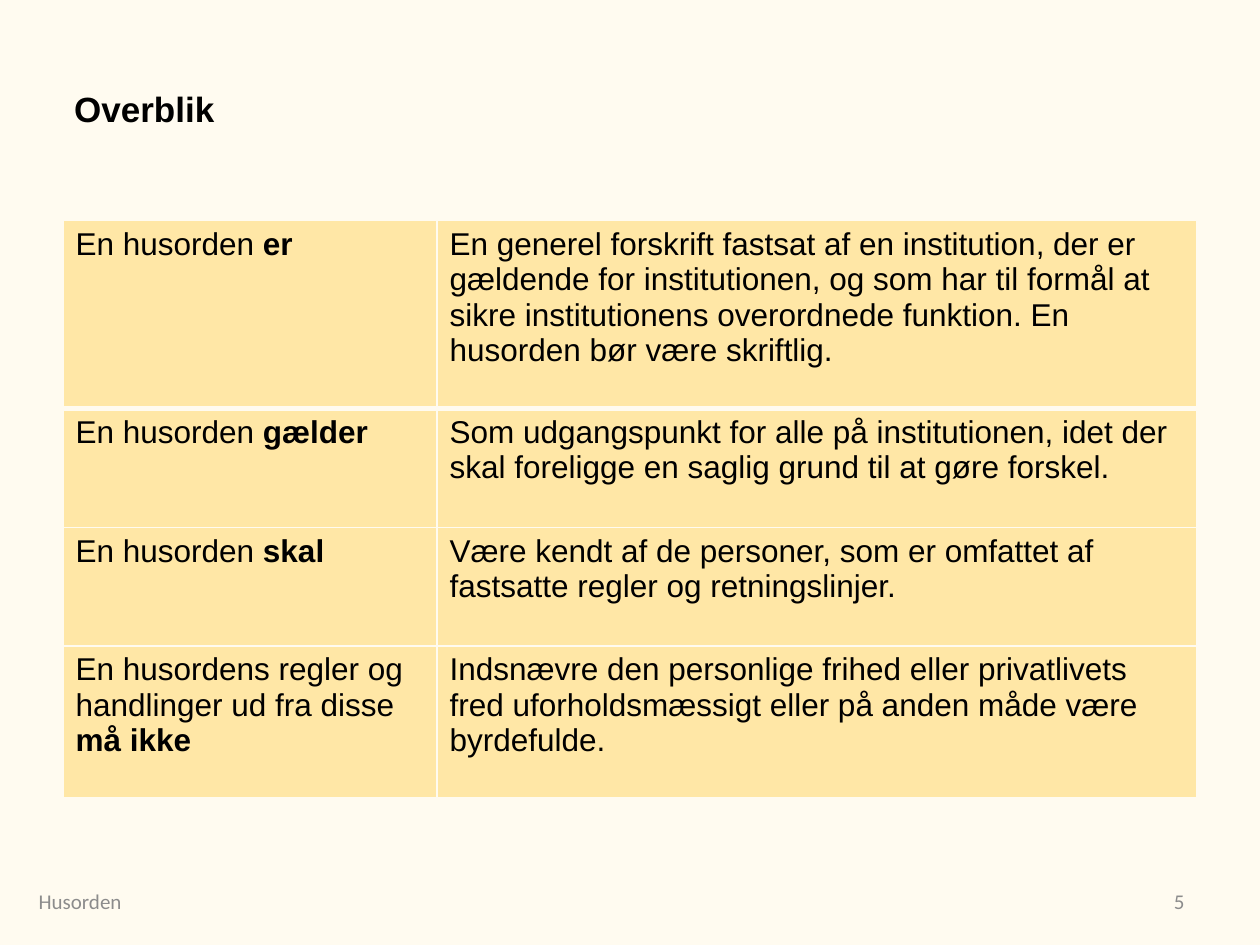
from dataclasses import dataclass

from lxml import etree
from pptx import Presentation
from pptx.dml.color import RGBColor
from pptx.enum.text import MSO_ANCHOR, PP_ALIGN
from pptx.oxml.ns import qn
from pptx.util import Cm, Pt

LEFT, RIGHT = PP_ALIGN.LEFT, PP_ALIGN.RIGHT
MIDDLE = MSO_ANCHOR.MIDDLE
TITLE_ONLY = 5


@dataclass(frozen=True)
class Theme:
    background: str = "FFFBF0"
    cell: str = "FFE7A6"
    text: str = "000000"
    muted: str = "8C8C8C"
    font: str = "Arial"
    footer_font: str = "Calibri"
    title_size: int = 20
    body_size: int = 18
    footer_size: int = 12
    border: int = 1
    header_border: int = 3


THEME = Theme()
COLUMN_WIDTHS = (7.54, 15.32)
ROW_HEIGHTS = (3.79, 2.39, 2.39, 3.07)

# Each row: lines of the left cell, its bold ending, text of the right cell
ROWS = (
    (("En husorden ",), "er",
     "En generel forskrift fastsat af en institution, der er gældende for "
     "institutionen, og som har til formål at sikre institutionens "
     "overordnede funktion. En husorden bør være skriftlig."),
    (("En husorden ",), "gælder",
     "Som udgangspunkt for alle på institutionen, idet der skal foreligge "
     "en saglig grund til at gøre forskel."),
    (("En husorden ",), "skal",
     "Være kendt af de personer, som er omfattet af fastsatte regler og "
     "retningslinjer."),
    (("En husordens regler og", "handlinger ud fra disse "), "må ikke",
     "Indsnævre den personlige frihed eller privatlivets fred "
     "uforholdsmæssigt eller på anden måde være byrdefulde."),
)


def format_run(run, size, color=THEME.text, font=THEME.font, bold=False):
    run.font.name = font
    run.font.size = Pt(size)
    run.font.bold = bold
    run.font.color.rgb = RGBColor.from_string(color)


def set_title(slide, text):
    title = slide.shapes.title
    title.left, title.top = Cm(1.24), Cm(0.48)
    title.width, title.height = Cm(16.31), Cm(3.4)
    title.text_frame.text = text
    title.text_frame.vertical_anchor = MIDDLE
    paragraph = title.text_frame.paragraphs[0]
    paragraph.alignment = LEFT
    format_run(paragraph.runs[0], THEME.title_size, bold=True)


def set_borders(cell, bottom_width):
    """Draw the four borders in the background colour."""
    properties = cell._tc.get_or_add_tcPr()
    sides = ("a:lnL", "a:lnR", "a:lnT", "a:lnB")
    for position, side in enumerate(sides):
        width = bottom_width if side == "a:lnB" else THEME.border
        line = etree.Element(qn(side), w=str(Pt(width)))
        fill = etree.SubElement(line, qn("a:solidFill"))
        etree.SubElement(fill, qn("a:srgbClr"), val=THEME.background)
        properties.insert(position, line)


def fill_cell(cell, lines, ending="", bottom_width=THEME.border):
    """Write the lines, with the ending in bold after the last one."""
    text_frame = cell.text_frame
    text_frame.text = "\n".join(lines)
    for paragraph in text_frame.paragraphs:
        format_run(paragraph.runs[0], THEME.body_size)
    if ending:
        run = text_frame.paragraphs[-1].add_run()
        run.text = ending
        format_run(run, THEME.body_size, bold=True)
    cell.fill.solid()
    cell.fill.fore_color.rgb = RGBColor.from_string(THEME.cell)
    set_borders(cell, bottom_width)


def add_overview_table(slide):
    frame = slide.shapes.add_table(
        len(ROWS), len(COLUMN_WIDTHS), Cm(1.27), Cm(4.45),
        Cm(sum(COLUMN_WIDTHS)), Cm(sum(ROW_HEIGHTS)))
    table = frame.table
    table.horz_banding = False
    for column, width in zip(table.columns, COLUMN_WIDTHS):
        column.width = Cm(width)
    for index, (lines, ending, description) in enumerate(ROWS):
        table.rows[index].height = Cm(ROW_HEIGHTS[index])
        bottom = THEME.header_border if index == 0 else THEME.border
        fill_cell(table.cell(index, 0), lines, ending, bottom)
        fill_cell(table.cell(index, 1), (description,), bottom_width=bottom)


def add_footer(slide, text, left, width, alignment):
    shape = slide.shapes.add_textbox(Cm(left), Cm(17.65), Cm(width), Cm(1.02))
    text_frame = shape.text_frame
    text_frame.word_wrap = True
    text_frame.vertical_anchor = MIDDLE
    text_frame.text = text
    paragraph = text_frame.paragraphs[0]
    paragraph.alignment = alignment
    format_run(paragraph.runs[0], THEME.footer_size, THEME.muted,
               THEME.footer_font)


def main():
    presentation = Presentation()
    presentation.slide_width, presentation.slide_height = Cm(25.4), Cm(19.05)
    slide = presentation.slides.add_slide(
        presentation.slide_layouts[TITLE_ONLY])
    slide.background.fill.solid()
    slide.background.fill.fore_color.rgb = RGBColor.from_string(
        THEME.background)
    set_title(slide, "Overblik")
    add_overview_table(slide)
    add_footer(slide, "Husorden", 0.53, 16.21, LEFT)
    add_footer(slide, "5", 18.21, 5.92, RIGHT)
    presentation.save("out.pptx")


if __name__ == "__main__":
    main()
